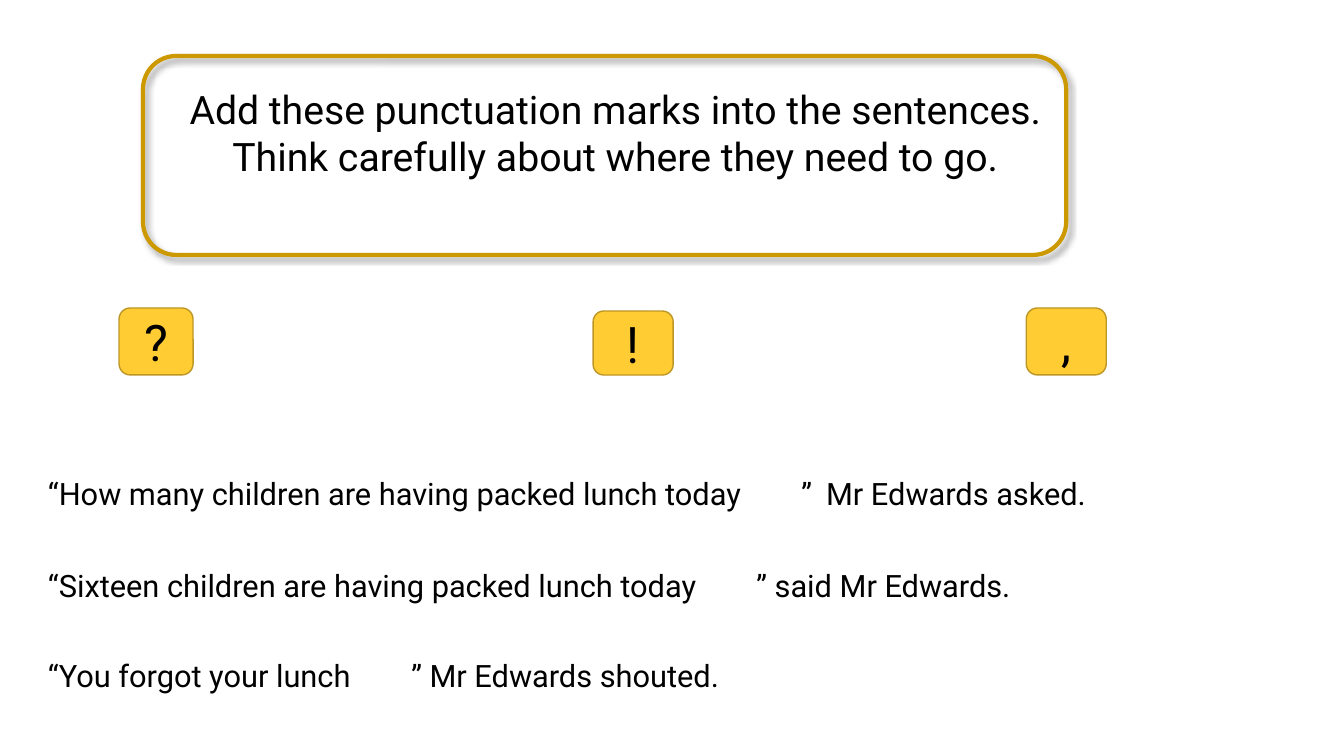
from lxml import etree
from pptx import Presentation
from pptx.dml.color import RGBColor
from pptx.enum.shapes import MSO_SHAPE
from pptx.enum.text import MSO_ANCHOR, PP_ALIGN
from pptx.oxml.ns import qn
from pptx.util import Emu, Inches, Pt

ROUNDED = MSO_SHAPE.ROUNDED_RECTANGLE
MIDDLE = MSO_ANCHOR.MIDDLE
LEFT = PP_ALIGN.LEFT
CENTER = PP_ALIGN.CENTER
EMU_PER_PX = 914400 / 100.8
COLORS = {"ink": "000000", "frame": "CC9900", "tile": "FFCC33", "edge": "BD9726"}


def px(length):
    return Emu(round(length * EMU_PER_PX))


def color(name):
    return RGBColor.from_string(COLORS[name])


class PunctuationSlide:
    font = "Roboto"

    def __init__(self, deck):
        self.page = deck.slides.add_slide(deck.slide_layouts[6])

    def fill_text(self, box, text, size, align, tabs=()):
        box.text_frame.word_wrap = True
        para = box.text_frame.paragraphs[0]
        para.alignment = align
        if tabs:
            stops = etree.SubElement(para._p.get_or_add_pPr(), qn("a:tabLst"))
            for stop in tabs:
                etree.SubElement(stops, qn("a:tab"), pos=str(px(stop)), algn="l")
        span = para.add_run()
        span.text = text
        for name, value in {"name": self.font, "size": Pt(size)}.items():
            setattr(span.font, name, value)
        span.font.color.rgb = color("ink")

    def text(self, area, text, size, align=LEFT, tabs=()):
        box = self.page.shapes.add_textbox(*map(px, area))
        self.fill_text(box, text, size, align, tabs)

    def rounded(self, area, line, width):
        box = self.page.shapes.add_shape(ROUNDED, *map(px, area))
        box.shadow.inherit = False
        box.fill.background()
        box.line.color.rgb = color(line)
        box.line.width = Pt(width)
        return box

    def frame(self, area):
        box = self.rounded(area, "frame", 3)
        effects = box._element.spPr.find(qn("a:effectLst"))
        shadow = etree.SubElement(
            effects, qn("a:outerShdw"), blurRad=str(Pt(4)), dist=str(Pt(3)),
            dir="2700000", algn="tl", rotWithShape="0")
        shade = etree.SubElement(shadow, qn("a:srgbClr"), val=COLORS["ink"])
        etree.SubElement(shade, qn("a:alpha"), val="40000")

    def tile(self, area, mark):
        box = self.rounded(area, "edge", 1)
        box.fill.solid()
        box.fill.fore_color.rgb = color("tile")
        box.text_frame.vertical_anchor = MIDDLE
        self.fill_text(box, mark, 36, CENTER)


def main():
    deck = Presentation()
    deck.slide_width = Inches(13.33)
    deck.slide_height = Inches(7.5)
    slide = PunctuationSlide(deck)

    slide.frame((143, 56, 923, 199))
    slide.text(
        (165, 80, 900, 104),
        "Add these punctuation marks into the sentences. "
        "Think carefully about where they need to go.",
        28, CENTER)

    tile_bottom = 375
    for mark, left, top, width in (
        ("?", 119, 308, 74),
        ("!", 593, 311, 80),
        (",", 1026, 308, 80),
    ):
        slide.tile((left, top, width, tile_bottom - top), mark)

    for top, sentence, tabs in (
        (470, "“How many children are having packed lunch today\t”\tMr Edwards asked.", (753, 778)),
        (562, "“Sixteen children are having packed lunch today\t” said Mr Edwards.", (708,)),
        (652, "“You forgot your lunch\t” Mr Edwards shouted.", (363,)),
    ):
        slide.text((38, top, 1268, 47), sentence, 22, tabs=tabs)

    deck.save("out.pptx")


if __name__ == "__main__":
    main()
